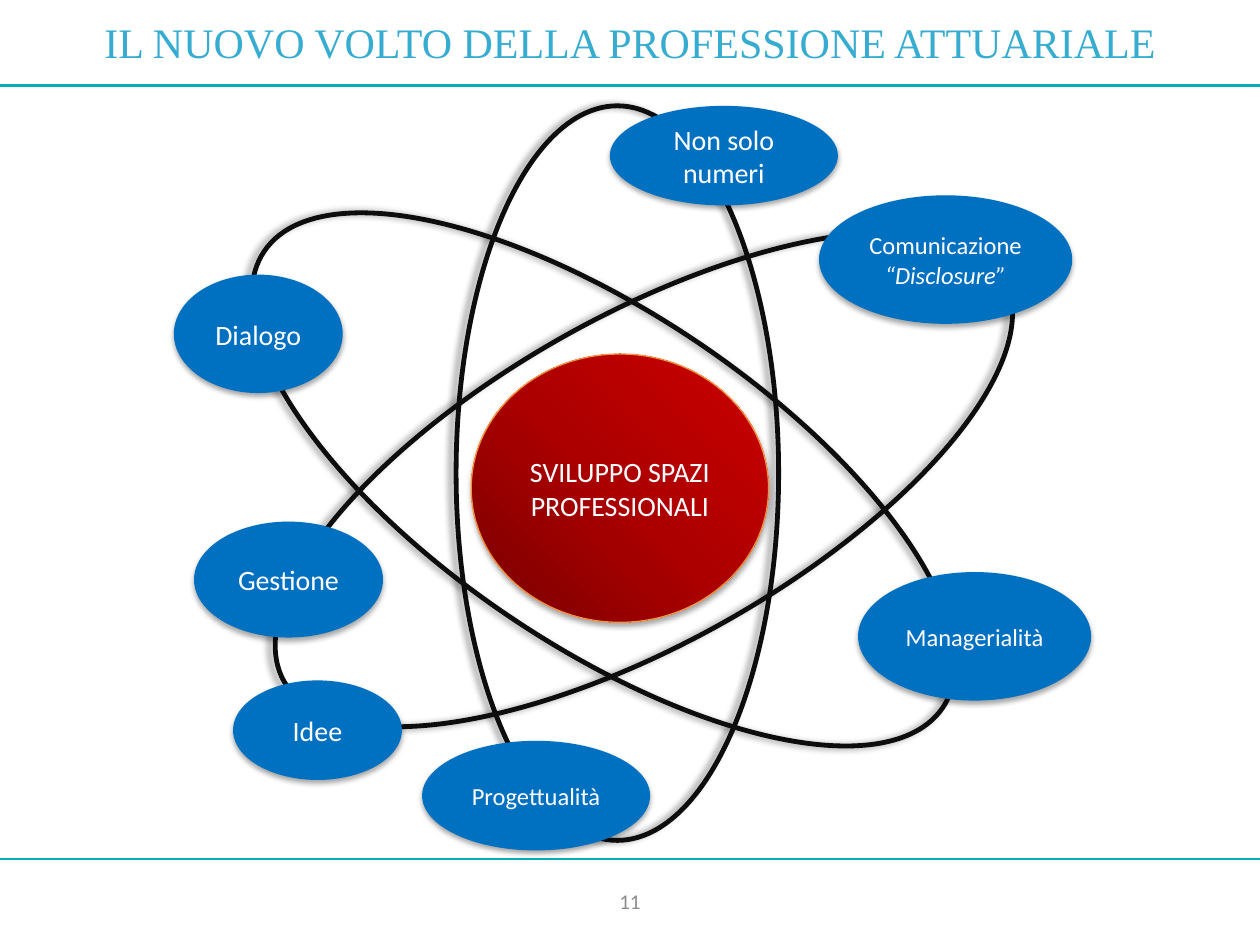
"""Build the slide on the new face of the actuarial profession."""
import copy
import dataclasses

import lxml.etree
import pptx
import pptx.dml.color
import pptx.enum.shapes
import pptx.enum.text
import pptx.oxml.ns
import pptx.util

Inches = pptx.util.Inches
COLORS = {
    "orbit": "0D0D0D",
    "satellite": "0070C0",
    "core_dark": "790000",
    "core_middle": "AC0000",
    "core_light": "CC0000",
    "core_edge": "F69240",
    "rule": "04AFB8",
    "title": "37ACD1",
    "page": "8C8C8C",
    "white": "FFFFFF",
    "shadow": "000000",
}


@dataclasses.dataclass(frozen=True)
class Box:
    left: float
    top: float
    width: float
    height: float

    def lengths(self) -> tuple:
        return tuple(Inches(value) for value in dataclasses.astuple(self))


@dataclasses.dataclass(frozen=True)
class Shadow:
    alpha: int
    blur: float
    distance: float
    direction: int


@dataclasses.dataclass(frozen=True)
class Orbit:
    box: Box
    rotation: float = 0


@dataclasses.dataclass(frozen=True)
class Satellite:
    box: Box
    lines: tuple
    size: int = 16


ORBIT_SHADOW = Shadow(40, 4, 3, 180)
BALL_SHADOW = Shadow(35, 3.1, 1.8, 90)
ORBITS = (
    Orbit(Box(3.62, 0.84, 2.56, 5.83)),
    Orbit(Box(3.47, 0.56, 2.64, 6.49), 303.9),
    Orbit(Box(3.81, 0.53, 2.6, 6.55), 60.7),
)
SATELLITES = (
    Satellite(Box(4.84, 0.84, 1.81, 0.79), ("Non solo numeri",)),
    Satellite(Box(6.5, 1.55, 2.01, 1.02), ("Comunicazione", "“Disclosure”"), 14),
    Satellite(Box(6.81, 4.54, 1.85, 1.02), ("Managerialità",), 14),
    Satellite(Box(3.35, 5.88, 1.81, 0.87), ("Progettualità",), 14),
    Satellite(Box(1.85, 5.4, 1.34, 0.79), ("Idee",)),
    Satellite(Box(1.54, 4.14, 1.5, 0.92), ("Gestione",)),
    Satellite(Box(1.38, 2.18, 1.34, 0.94), ("Dialogo",)),
)


def rgb(name: str) -> pptx.dml.color.RGBColor:
    return pptx.dml.color.RGBColor.from_string(COLORS[name])


def write_text(shape, *lines: str, size: int, color: str = "white",
               font: str = "Calibri", italic_from: int = 1) -> None:
    frame = shape.text_frame
    frame.word_wrap = True
    frame.vertical_anchor = pptx.enum.text.MSO_ANCHOR.MIDDLE
    frame.margin_left = frame.margin_right = Inches(0.05)
    for index, line in enumerate(lines):
        paragraph = frame.add_paragraph() if index else frame.paragraphs[0]
        paragraph.alignment = pptx.enum.text.PP_ALIGN.CENTER
        run = paragraph.add_run()
        run.text = line
        run.font.name = font
        run.font.size = pptx.util.Pt(size)
        run.font.bold = False
        run.font.italic = index >= italic_from
        run.font.color.rgb = rgb(color)


def add_shadow(shape, shadow: Shadow) -> None:
    shape.shadow.inherit = False
    effects = shape.element.spPr.find(pptx.oxml.ns.qn("a:effectLst"))
    outer = lxml.etree.SubElement(
        effects, pptx.oxml.ns.qn("a:outerShdw"),
        blurRad=str(pptx.util.Pt(shadow.blur)), dist=str(pptx.util.Pt(shadow.distance)),
        dir=str(shadow.direction * 60000), rotWithShape="0")
    color = lxml.etree.SubElement(outer, pptx.oxml.ns.qn("a:srgbClr"), val=COLORS["shadow"])
    lxml.etree.SubElement(color, pptx.oxml.ns.qn("a:alpha"), val=str(shadow.alpha * 1000))


def add_ellipse(slide, box: Box, shadow: Shadow):
    shape = slide.shapes.add_shape(pptx.enum.shapes.MSO_SHAPE.OVAL, *box.lengths())
    add_shadow(shape, shadow)
    return shape


def add_orbit(slide, orbit: Orbit) -> None:
    shape = add_ellipse(slide, orbit.box, ORBIT_SHADOW)
    shape.rotation = orbit.rotation
    shape.fill.background()
    shape.line.color.rgb = rgb("orbit")
    shape.line.width = pptx.util.Pt(2.75)


def add_satellite(slide, satellite: Satellite) -> None:
    shape = add_ellipse(slide, satellite.box, BALL_SHADOW)
    shape.fill.solid()
    shape.fill.fore_color.rgb = rgb("satellite")
    shape.line.fill.background()
    write_text(shape, *satellite.lines, size=satellite.size)


def add_core(slide) -> None:
    shape = add_ellipse(slide, Box(3.74, 2.81, 2.36, 2.13), BALL_SHADOW)
    shape.fill.gradient()
    shape.fill.gradient_angle = 45
    stops = shape.element.spPr.find(".//" + pptx.oxml.ns.qn("a:gsLst"))
    stops.insert(1, copy.deepcopy(stops[0]))
    names = ("core_dark", "core_middle", "core_light")
    for index, (stop, name) in enumerate(zip(shape.fill.gradient_stops, names)):
        stop.position = index / 2
        stop.color.rgb = rgb(name)
    shape.line.color.rgb = rgb("core_edge")
    shape.line.width = pptx.util.Pt(0.75)
    write_text(shape, "SVILUPPO SPAZI PROFESSIONALI", size=16)


def add_rule(slide, top: float, width: float) -> None:
    line = slide.shapes.add_connector(
        pptx.enum.shapes.MSO_CONNECTOR.STRAIGHT, 0, Inches(top), Inches(10), Inches(top))
    line.line.color.rgb = rgb("rule")
    line.line.width = pptx.util.Pt(width)
    lxml.etree.SubElement(line.element.spPr, pptx.oxml.ns.qn("a:effectLst"))


def main() -> None:
    presentation = pptx.Presentation()
    presentation.slide_width, presentation.slide_height = Inches(10), Inches(7.5)
    slide = presentation.slides.add_slide(presentation.slide_layouts[5])
    title = slide.shapes.title
    title.left, title.top, title.width, title.height = Box(0, 0.06, 10, 0.54).lengths()
    write_text(title, "IL NUOVO VOLTO DELLA PROFESSIONE ATTUARIALE", size=24,
               color="title", font="Times New Roman")
    add_rule(slide, 6.82, 1)
    for orbit in ORBITS:
        add_orbit(slide, orbit)
    add_core(slide)
    for satellite in SATELLITES:
        add_satellite(slide, satellite)
    add_rule(slide, 0.68, 1.5)
    page = slide.shapes.add_textbox(*Box(0, 6.95, 10, 0.4).lengths())
    write_text(page, "11", size=12, color="page")
    presentation.save("out.pptx")


if __name__ == "__main__":
    main()
